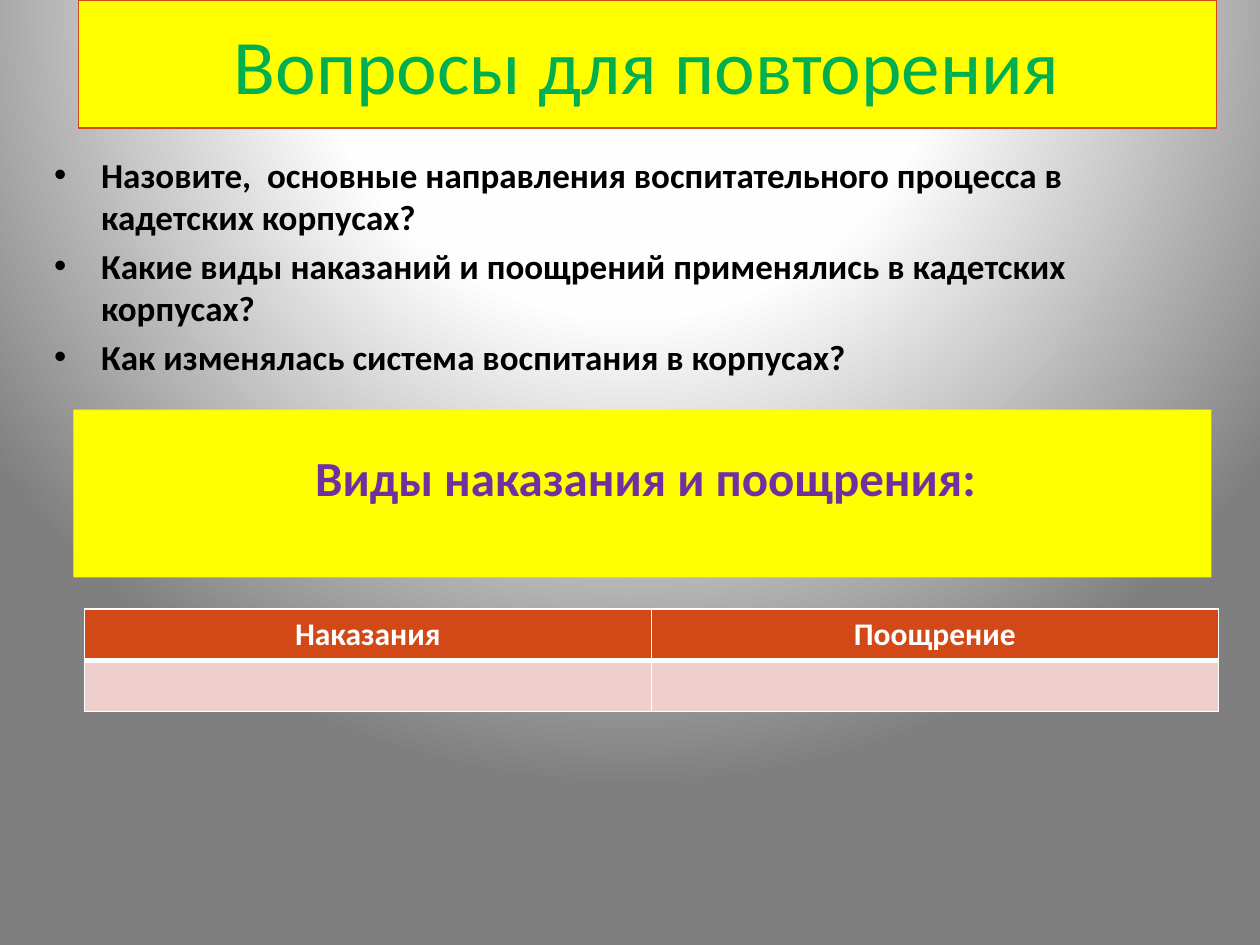
from lxml import etree
from pptx import Presentation
from pptx import util as u
from pptx.dml.color import RGBColor
from pptx.enum import shapes, text
from pptx.oxml import parse_xml
from pptx.oxml.ns import nsdecls, qn

YELLOW = RGBColor(0xFF, 0xFF, 0x00)
GREEN = RGBColor(0x00, 0xB0, 0x50)
PURPLE = RGBColor(0x70, 0x30, 0xA0)
ORANGE = RGBColor(0xD3, 0x48, 0x17)
PINK = RGBColor(0xEF, 0xCF, 0xCC)
WHITE = RGBColor(0xFF, 0xFF, 0xFF)
BLACK = RGBColor(0x00, 0x00, 0x00)
GRAY = RGBColor(0x7F, 0x7F, 0x7F)
NEAR_WHITE = RGBColor(0xFE, 0xFE, 0xFE)

QUESTIONS = [
    "Назовите,  основные направления воспитательного процесса в кадетских корпусах?",
    "Какие виды наказаний и поощрений применялись в кадетских корпусах?",
    "Как изменялась система воспитания в корпусах?",
]


def write(paragraph, content, size=18, color=BLACK, bold=False,
          align=text.PP_ALIGN.LEFT, before=0, bullet=None):
    paragraph.alignment = align
    paragraph.space_before = u.Pt(before)
    run = paragraph.add_run()
    run.text = content
    run.font.name = "Calibri"
    run.font.size = u.Pt(size)
    run.font.bold = bold
    run.font.color.rgb = color
    if bullet:
        properties = paragraph._p.get_or_add_pPr()
        properties.set("marL", str(u.Cm(0.95)))
        properties.set("indent", str(-u.Cm(0.95)))
        etree.SubElement(properties, qn("a:buFont")).set("typeface", "Arial")
        etree.SubElement(properties, qn("a:buChar")).set("char", bullet)


class SlideBuilder:
    center = text.PP_ALIGN.CENTER

    def __init__(self, presentation):
        self.slide = presentation.slides.add_slide(presentation.slide_layouts[5])

    def background(self, stops):
        fill = self.slide.background.fill
        fill.solid()
        solid = self.slide._element.find(".//" + qn("p:bgPr"))[0]
        stop_xml = "".join(
            f'<a:gs pos="{position * 1000}"><a:srgbClr val="{color}"/></a:gs>'
            for position, color in stops)
        solid.getparent().replace(solid, parse_xml(
            f'<a:gradFill {nsdecls("a")} rotWithShape="1"><a:gsLst>{stop_xml}</a:gsLst>'
            '<a:path path="circle"><a:fillToRect l="50000" t="-80000" r="50000" b="180000"/>'
            '</a:path></a:gradFill>'))

    def title(self, content, left, top, width, height):
        shape = self.slide.shapes.title
        shape.left, shape.top, shape.width, shape.height = map(u.Cm, (left, top, width, height))
        shape.fill.solid()
        shape.fill.fore_color.rgb = YELLOW
        shape.line.color.rgb = ORANGE
        shape.line.width = u.Pt(0.75)
        shape.text_frame.vertical_anchor = text.MSO_ANCHOR.MIDDLE
        write(shape.text_frame.paragraphs[0], content, size=44, color=GREEN, align=self.center)

    def text_box(self, contents, left, top, width, height, **style):
        shape = self.slide.shapes.add_textbox(*map(u.Cm, (left, top, width, height)))
        frame = shape.text_frame
        frame.word_wrap = True
        for index, content in enumerate(contents):
            paragraph = frame.add_paragraph() if index else frame.paragraphs[0]
            write(paragraph, content, **style)

    def panel(self, left, top, width, height):
        shape = self.slide.shapes.add_shape(
            shapes.MSO_SHAPE.RECTANGLE, *map(u.Cm, (left, top, width, height)))
        shape.shadow.inherit = False
        shape.fill.solid()
        shape.fill.fore_color.rgb = YELLOW
        shape.line.fill.background()

    def borders(self, cell, bottom):
        properties = cell._tc.get_or_add_tcPr()
        widths = {"lnL": 1, "lnR": 1, "lnT": 1, "lnB": bottom}
        for index, (side, width) in enumerate(widths.items()):
            properties.insert(index, parse_xml(
                f'<a:{side} {nsdecls("a")} w="{u.Pt(width)}"><a:solidFill>'
                f'<a:srgbClr val="{WHITE}"/></a:solidFill></a:{side}>'))

    def table(self, headings, left, top, width, height):
        table = self.slide.shapes.add_table(
            2, len(headings), *map(u.Cm, (left, top, width, height))).table
        table.horz_banding = False
        for column, heading in enumerate(headings):
            for row, color, bottom in ((0, ORANGE, 3), (1, PINK, 1)):
                cell = table.cell(row, column)
                cell.fill.solid()
                cell.fill.fore_color.rgb = color
                self.borders(cell, bottom)
            write(table.cell(0, column).text_frame.paragraphs[0], heading,
                  color=WHITE, bold=True, align=self.center)


def main():
    presentation = Presentation()
    presentation.slide_width, presentation.slide_height = u.Cm(25.4), u.Cm(19.05)
    builder = SlideBuilder(presentation)
    builder.background([(0, WHITE), (40, NEAR_WHITE), (100, GRAY)])
    builder.title("Вопросы для повторения", 1.58, 0, 22.94, 2.58)
    builder.text_box(QUESTIONS, 0.84, 2.97, 23.77, 5.08,
                     size=20, bold=True, before=4, bullet="•")
    builder.panel(1.48, 8.26, 22.94, 3.38)
    builder.text_box(["Виды наказания и поощрения:"], 2.11, 8.89, 21.8, 2.64,
                     size=28, color=PURPLE, bold=True, align=builder.center)
    builder.table(["Наказания", "Поощрение"], 1.7, 12.28, 22.86, 2.06)
    presentation.save("out.pptx")


if __name__ == "__main__":
    main()
